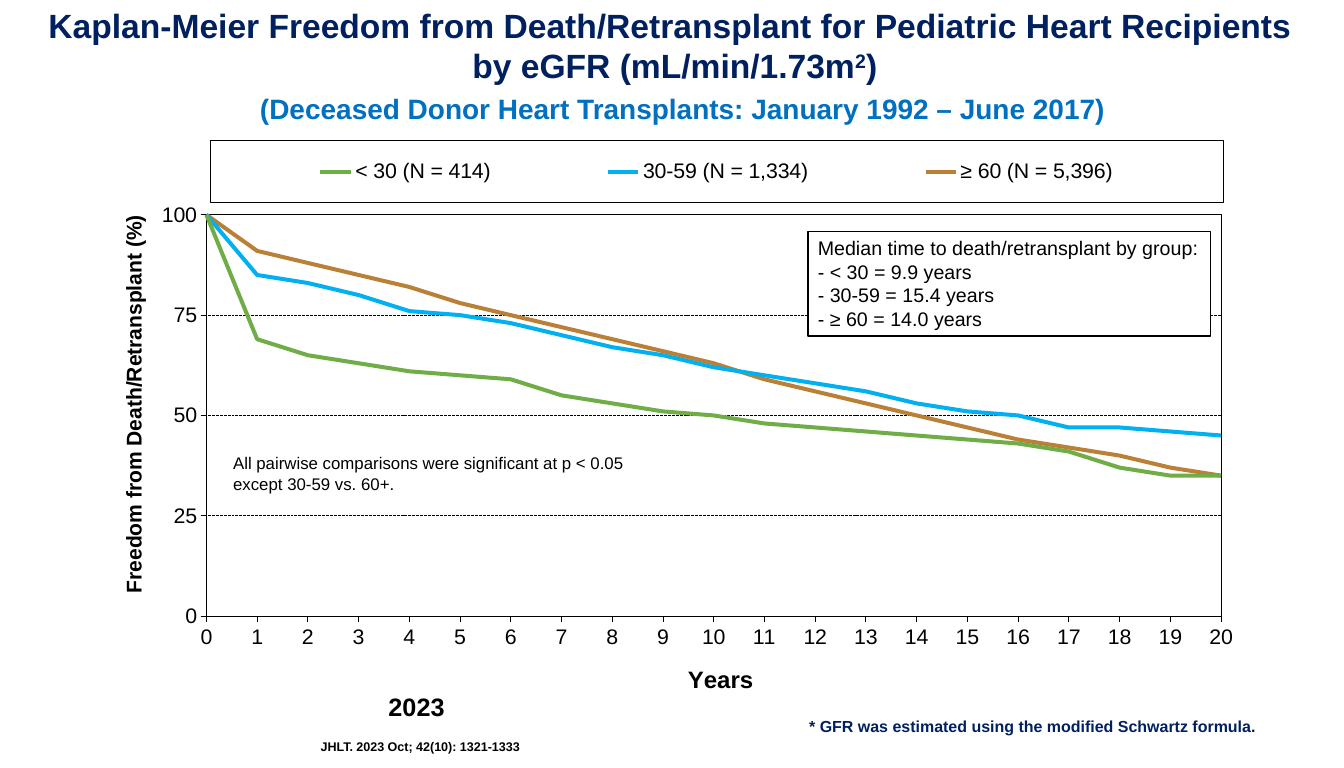
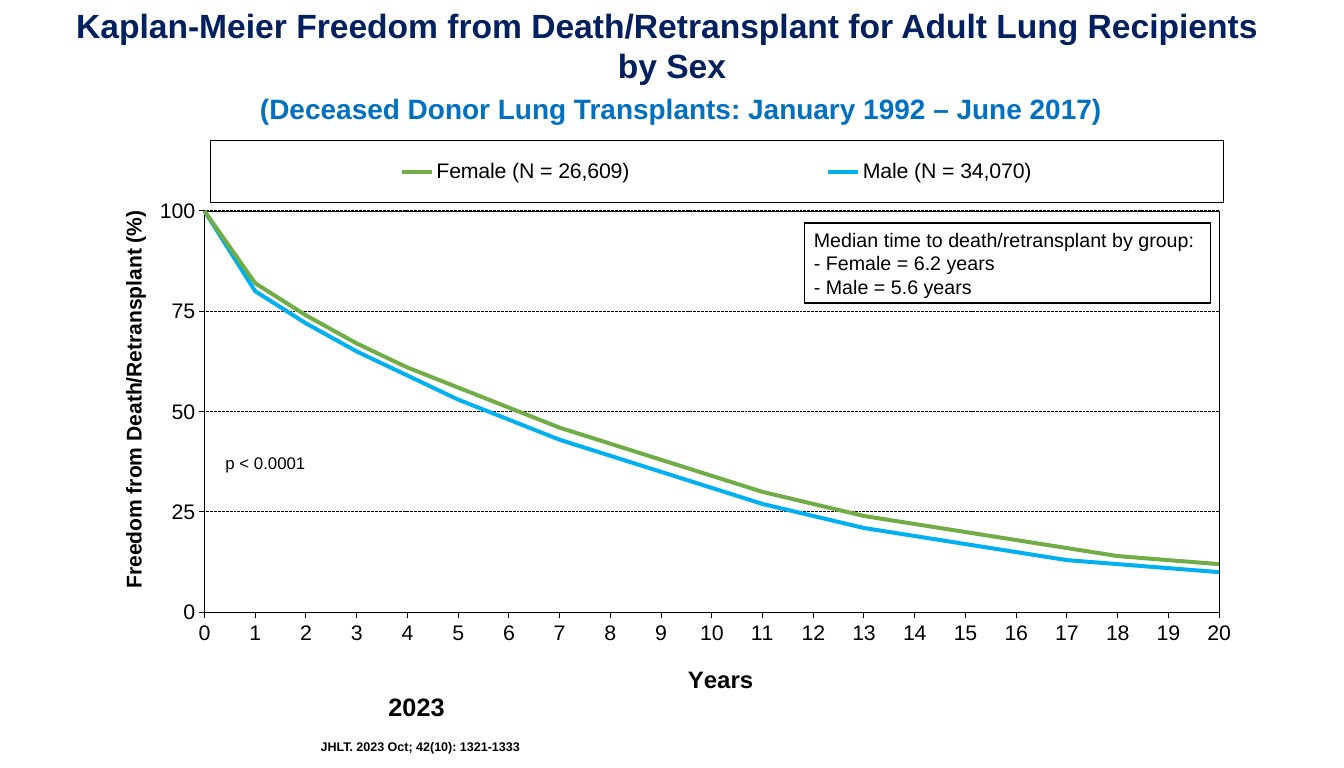
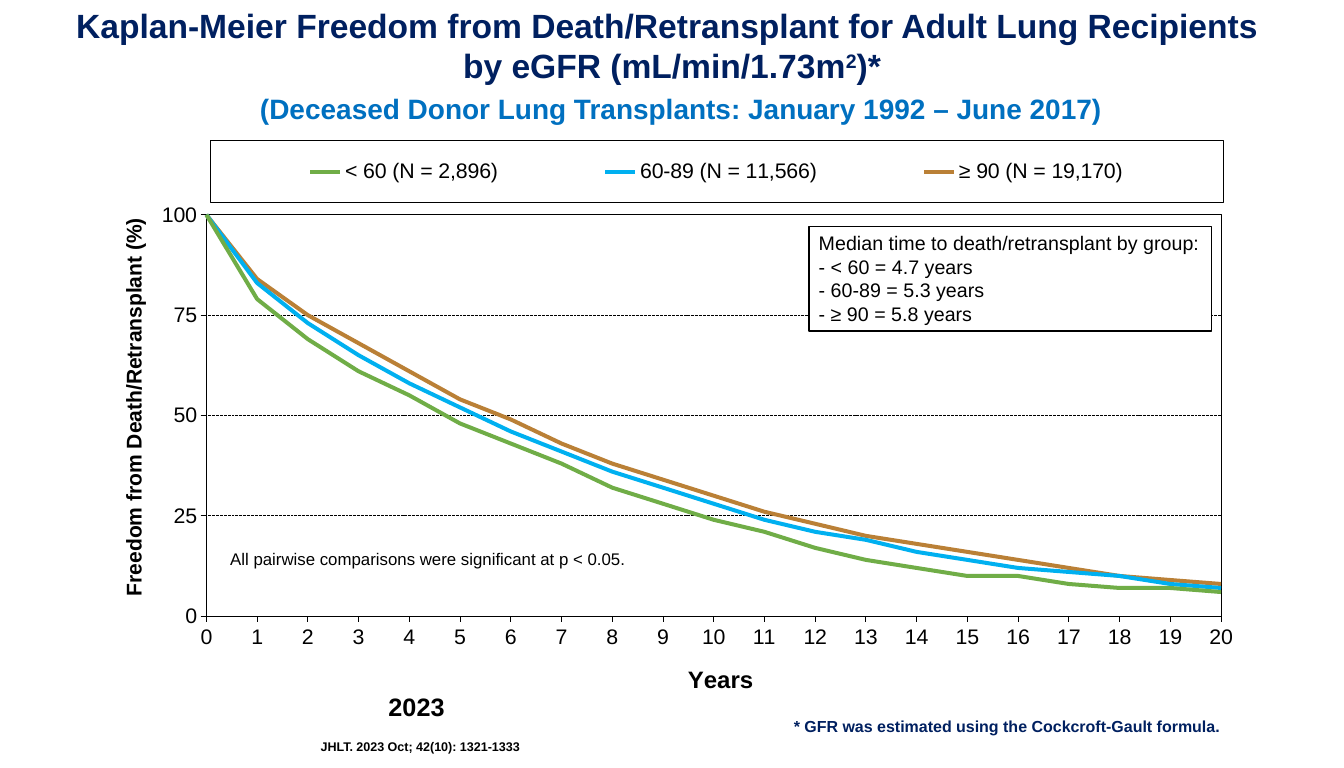
from lxml.etree import SubElement
from pptx import Presentation
from pptx.chart.data import XyChartData
from pptx.dml.color import RGBColor
from pptx.enum.chart import XL_CHART_TYPE, XL_LEGEND_POSITION, XL_TICK_MARK
from pptx.enum.dml import MSO_LINE
from pptx.enum.shapes import MSO_SHAPE
from pptx.enum.text import MSO_ANCHOR, MSO_AUTO_SIZE, PP_ALIGN
from pptx.oxml.ns import qn
from pptx.util import Inches, Pt

# Shared colours and text styles
NAVY = RGBColor(0x00, 0x20, 0x60)
BLUE = RGBColor(0x00, 0x70, 0xC0)
BLACK = RGBColor(0x00, 0x00, 0x00)
WHITE = RGBColor(0xFF, 0xFF, 0xFF)
GREEN = RGBColor(0x70, 0xAD, 0x47)
SKY = RGBColor(0x00, 0xB0, 0xF0)
BROWN = RGBColor(0xBA, 0x80, 0x36)
HUES = [GREEN, SKY, BROWN]

HEAD = {"size": Pt(25.2), "bold": True, "color": NAVY}
SUB = {"size": Pt(21), "bold": True, "color": BLUE}
BODY = {"size": Pt(14.7), "bold": False, "color": BLACK}
NOTE = {"size": Pt(12.6), "bold": False, "color": BLACK}
FOOT = {"size": Pt(12), "bold": True, "color": NAVY}
YEAR = {"size": Pt(18.9), "bold": True, "color": BLACK}
CITE = {"size": Pt(9.4), "bold": True, "color": BLACK}
TICK = {"size": Pt(16), "bold": False, "color": BLACK}
YNAME = {"size": Pt(16), "bold": True, "color": BLACK}
XNAME = {"size": Pt(18), "bold": True, "color": BLACK}

# Chart area, in inches
LEFT, TOP, WIDE, HIGH = 1.2, 1.2, 12.19, 6.1

# What differs from slide to slide
SLIDES = [
    {
        "who": "Pediatric Heart", "organ": "Heart", "left": 0.03,
        "by": ["by eGFR (mL/min/1.73m", "2", ")"],
        "plot": (0.95, 1.05), "ytop": 1.06,
        "box": (8.42, 2.41, 4.19, 1.09),
        "medians": ["< 30 = 9.9", "30-59 = 15.4", "≥ 60 = 14.0"],
        "note": ("All pairwise comparisons were significant at p < 0.05 "
                 "except 30-59 vs. 60+."),
        "spot": (2.33, 4.67),
        "method": "modified Schwartz", "foot": (8.33, 7.41),
        "lines": {
            "< 30 (N = 414)": [
                100, 69, 65, 63, 61, 60, 59, 55, 53, 51, 50,
                48, 47, 46, 45, 44, 43, 41, 37, 35, 35],
            "30-59 (N = 1,334)": [
                100, 85, 83, 80, 76, 75, 73, 70, 67, 65, 62,
                60, 58, 56, 53, 51, 50, 47, 47, 46, 45],
            "≥ 60 (N = 5,396)": [
                100, 91, 88, 85, 82, 78, 75, 72, 69, 66, 63,
                59, 56, 53, 50, 47, 44, 42, 40, 37, 35],
        },
    },
    {
        "who": "Adult Lung", "organ": "Lung", "left": 0,
        "by": ["by Sex"],
        "plot": (0.93, 1.01), "ytop": 1.01,
        "box": (8.38, 2.32, 4.23, 0.84),
        "medians": ["Female = 6.2", "Male = 5.6"],
        "note": "p < 0.0001", "spot": (2.25, 4.67),
        "lines": {
            "Female (N = 26,609)": [
                100, 82, 74, 67, 61, 56, 51, 46, 42, 38, 34,
                30, 27, 24, 22, 20, 18, 16, 14, 13, 12],
            "Male (N = 34,070)": [
                100, 80, 72, 65, 59, 53, 48, 43, 39, 35, 31,
                27, 24, 21, 19, 17, 15, 13, 12, 11, 10],
        },
    },
    {
        "who": "Adult Lung", "organ": "Lung", "left": 0,
        "by": ["by eGFR (mL/min/1.73m", "2", ")*"],
        "plot": (0.95, 1.05), "ytop": 1.09,
        "box": (8.43, 2.36, 4.19, 1.09),
        "medians": ["< 60 = 4.7", "60-89 = 5.3", "≥ 90 = 5.8"],
        "note": "All pairwise comparisons were significant at p < 0.05.",
        "spot": (2.3, 5.67),
        "method": "Cockcroft-Gault", "foot": (8.17, 7.41),
        "lines": {
            "< 60 (N = 2,896)": [
                100, 79, 69, 61, 55, 48, 43, 38, 32, 28, 24,
                21, 17, 14, 12, 10, 10, 8, 7, 7, 6],
            "60-89 (N = 11,566)": [
                100, 83, 73, 65, 58, 52, 46, 41, 36, 32, 28,
                24, 21, 19, 16, 14, 12, 11, 10, 8, 7],
            "≥ 90 (N = 19,170)": [
                100, 84, 75, 68, 61, 54, 49, 43, 38, 34, 30,
                26, 23, 20, 18, 16, 14, 12, 10, 9, 8],
        },
    },
]


# Text
def style(font, form):
    font.name = "Arial"
    for key, val in form.items():
        if key == "color":
            font.color.rgb = val
        else:
            setattr(font, key, val)


def write(shape, rows, form, align=PP_ALIGN.LEFT, grow=True, **more):
    """Each row is a list of runs; every second run is raised."""
    frame = shape.text_frame
    setup = {"word_wrap": True, "vertical_anchor": MSO_ANCHOR.TOP}
    if grow:
        setup["auto_size"] = MSO_AUTO_SIZE.SHAPE_TO_FIT_TEXT
    for key, val in {**setup, **more}.items():
        setattr(frame, key, val)
    for i, row in enumerate(rows):
        para = frame.add_paragraph() if i else frame.paragraphs[0]
        para.alignment = align
        for j, text in enumerate(row):
            run = para.add_run()
            run.text = text
            style(run.font, form)
            if j % 2:
                run._r.get_or_add_rPr().set("baseline", "30000")


def label(slide, area, rows, form, **more):
    box = slide.shapes.add_textbox(*map(Inches, area))
    write(box, rows, form, **more)


def panel(slide, area, rows, form, fill, edge, width, **more):
    box = slide.shapes.add_shape(MSO_SHAPE.RECTANGLE, *map(Inches, area))
    box.shadow.inherit = False
    if fill is None:
        box.fill.background()
    else:
        box.fill.solid()
        box.fill.fore_color.rgb = fill
    box.line.color.rgb = edge
    box.line.width = Pt(width)
    write(box, rows, form, **more)


# Chart
def place(part, index, inner=False, **spots):
    """Fix a chart part's place, in inches from the chart's corner."""
    for old in part.findall(qn("c:layout")):
        part.remove(old)
    layout = SubElement(part, qn("c:layout"))
    part.insert(index, layout)
    manual = SubElement(layout, qn("c:manualLayout"))
    items = {"layoutTarget": "inner"} if inner else {}
    items.update(xMode="edge", yMode="edge")
    for key, val in spots.items():
        items[key] = val / (WIDE if key in "xw" else HIGH)
    for key, val in items.items():
        SubElement(manual, qn("c:" + key)).set("val", str(val))


def frame(part):
    """Outline a chart part with a thin black line."""
    props = SubElement(part, qn("c:spPr"))
    line = SubElement(props, qn("a:ln"), w=str(Pt(0.75)))
    fill = SubElement(line, qn("a:solidFill"))
    SubElement(fill, qn("a:srgbClr"), val=str(BLACK))
    return props


def thin(line):
    line.color.rgb = BLACK
    line.width = Pt(0.75)


def scale(axis, top, step, name, form, x, y, turn=0):
    values = {"minimum_scale": 0, "maximum_scale": top, "major_unit": step,
              "major_tick_mark": XL_TICK_MARK.OUTSIDE,
              "minor_tick_mark": XL_TICK_MARK.NONE,
              "has_major_gridlines": False}
    for key, val in values.items():
        setattr(axis, key, val)
    labels = axis.tick_labels
    labels.number_format = "#,##0"
    labels.number_format_is_linked = False
    style(labels.font, TICK)
    thin(axis.format.line)
    title = axis.axis_title
    text = title.text_frame
    run = text.paragraphs[0].add_run()
    run.text = name
    style(run.font, form)
    text._txBody.bodyPr.set("rot", str(turn * 60000))
    place(title._element, 1, x=x, y=y)


def graph(slide, info):
    data = XyChartData()
    for name, points in info["lines"].items():
        row = data.add_series(name)
        for year, share in enumerate(points):
            row.add_data_point(year, share)
    area = map(Inches, (LEFT, TOP, WIDE, HIGH))
    kind = XL_CHART_TYPE.XY_SCATTER_LINES_NO_MARKERS
    chart = slide.shapes.add_chart(kind, *area, data).chart
    chart.has_title = False
    style(chart.font, {"size": Pt(18), "color": BLACK})

    # Curves
    plot = chart.plots[0]
    plot.vary_by_categories = False
    for row, hue in zip(plot.series, HUES):
        row.smooth = False
        row.format.line.color.rgb = hue
        row.format.line.width = Pt(3)

    # Axes
    scale(chart.category_axis, 20, 1, "Years", XNAME, 5.92, 5.74)
    side = chart.value_axis
    scale(side, 100, 25, "Freedom from Death/Retransplant (%)", YNAME,
          0.01, info["ytop"], -90)
    side.has_major_gridlines = True
    grid = side.major_gridlines.format.line
    thin(grid)
    grid.dash_style = MSO_LINE.SQUARE_DOT

    # Plot and legend frames
    body = chart._chartSpace.chart.plotArea
    x, y = info["plot"]
    place(body, 0, inner=True, x=x, y=y, w=10.57, h=4.23)
    frame(body)
    chart.has_legend = True
    legend = chart.legend
    legend.position = XL_LEGEND_POSITION.TOP
    legend.include_in_layout = True
    style(legend.font, TICK)
    key = legend._element
    place(key, 1, x=0.99, y=0.27, w=10.55, h=0.65)
    key.find(qn("c:txPr")).addprevious(frame(key))


# Slide parts
def source(slide):
    label(slide, (3.31, 7.15, 2.06, 0.42), [["2023"]], YEAR,
          align=PP_ALIGN.CENTER)
    panel(slide, (3.31, 7.65, 2.22, 0.26),
          [["JHLT. 2023 Oct; 42(10): 1321-1333"]], CITE, None, WHITE, 0.75,
          vertical_anchor=MSO_ANCHOR.MIDDLE,
          margin_left=Inches(0.03), margin_right=0)


def heading(slide, info):
    first = ("Kaplan-Meier Freedom from Death/Retransplant for "
             f"{info['who']} Recipients ")
    label(slide, (info["left"], 0, 14, 1.05), [[first], info["by"]], HEAD,
          align=PP_ALIGN.CENTER, grow=False)
    span = (f"(Deceased Donor {info['organ']} Transplants: "
            "January 1992 – June 2017)")
    label(slide, (2.61, 0.9, 9.36, 0.45), [[span]], SUB)


def remarks(slide, info):
    rows = [["Median time to death/retransplant by group:"]]
    rows += [[f"- {item} years"] for item in info["medians"]]
    panel(slide, info["box"], rows, BODY, WHITE, BLACK, 1.25)
    label(slide, (*info["spot"], 4.34, 0.68), [[info["note"]]], NOTE,
          grow=False)
    if "method" in info:
        text = f"* GFR was estimated using the {info['method']} formula."
        label(slide, (*info["foot"], 5.48, 0.3), [[text]], FOOT)


def main():
    deck = Presentation()
    deck.slide_width = Inches(14)
    deck.slide_height = Inches(8)
    for info in SLIDES:
        slide = deck.slides.add_slide(deck.slide_layouts[6])
        source(slide)
        graph(slide, info)
        heading(slide, info)
        remarks(slide, info)
    deck.save("out.pptx")


if __name__ == "__main__":
    main()
